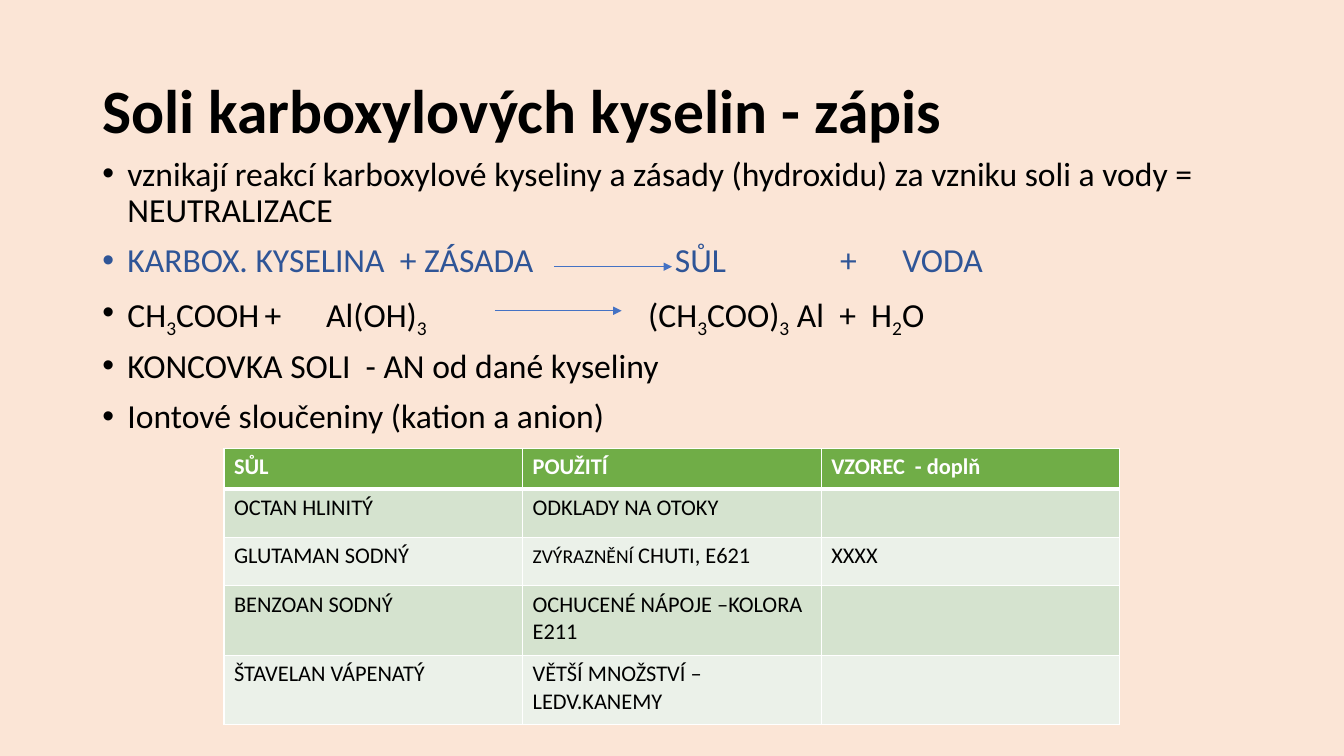
import dataclasses

import lxml.etree
import pptx
import pptx.dml.color
import pptx.enum.shapes
import pptx.enum.text
import pptx.oxml.ns
import pptx.util

Pt = pptx.util.Pt
qn = pptx.oxml.ns.qn
BLACK, WHITE, BLUE = "000000", "FFFFFF", "2F5597"


@dataclasses.dataclass(frozen=True)
class Run:
    text: str
    size: float = 24
    color: str = BLACK
    bold: bool = False
    base: int = 0


@dataclasses.dataclass(frozen=True)
class Item:
    runs: list[Run]
    tabs: tuple[float, ...] = ()


@dataclasses.dataclass(frozen=True)
class Arrow:
    left: float
    right: float
    top: float


def sub(text: str) -> Run:
    return Run(text, base=-25000)


ITEMS = [
    Item([Run("vznikají reakcí karboxylové kyseliny a zásady (hydroxidu) "
              "za vzniku soli a vody = NEUTRALIZACE")]),
    Item([Run("KARBOX. KYSELINA  + ZÁSADA\tSŮL\t+\tVODA", color=BLUE)],
         (409, 527, 571.5)),
    Item([Run("CH"), sub("3"), Run("COOH\t+\tAl(OH)"), sub("3"),
          Run("\t(CH"), sub("3"), Run("COO)"), sub("3"),
          Run(" Al  +  H"), sub("2"), Run("O")],
         (116, 160, 390)),
    Item([Run("KONCOVKA SOLI  - AN od dané kyseliny")]),
    Item([Run("Iontové sloučeniny (kation a anion)")]),
]
ARROWS = [Arrow(396, 480, 190.5), Arrow(353.5, 444, 222)]
HEADS = ["SŮL", "POUŽITÍ", "VZOREC  - doplň"]
SALTS = [
    ["OCTAN HLINITÝ", "ODKLADY NA OTOKY", ""],
    ["GLUTAMAN SODNÝ", "CHUTI, E621", "XXXX"],
    ["BENZOAN SODNÝ", "OCHUCENÉ NÁPOJE –KOLORA E211", ""],
    ["ŠTAVELAN VÁPENATÝ", "VĚTŠÍ MNOŽSTVÍ – LEDV.KANEMY", ""],
]
LEADS = {"CHUTI, E621": Run("ZVÝRAZNĚNÍ ", 14)}
ROWS = [28.8, 34.6, 34.6, 49.7, 49.7]
BANDS = ["D5E3CF", "EBF1E9"]


def rgb(code: str) -> pptx.dml.color.RGBColor:
    return pptx.dml.color.RGBColor.from_string(code)


def tint(fill, code: str) -> None:
    fill.solid()
    fill.fore_color.rgb = rgb(code)


def write(para, runs: list[Run]) -> None:
    for part in runs:
        run = para.add_run()
        run.text = part.text
        font = run.font
        font.name, font.size, font.bold = "Calibri", Pt(part.size), part.bold
        font.color.rgb = rgb(part.color)
        if part.base:
            run._r.get_or_add_rPr().set("baseline", str(part.base))


def frame(slide, left: float, top: float, width: float, height: float):
    """Add a wrapping text box and return its text frame."""
    box = slide.shapes.add_textbox(Pt(left), Pt(top), Pt(width), Pt(height))
    box.text_frame.word_wrap = True
    return box.text_frame


def bullet(para, item: Item) -> None:
    para.line_spacing = 0.9
    para.space_before = Pt(10)
    props = para._p.get_or_add_pPr()
    props.set("marL", str(Pt(18)))
    props.set("indent", str(Pt(-18)))
    lxml.etree.SubElement(props, qn("a:buFont")).set("typeface", "Arial")
    lxml.etree.SubElement(props, qn("a:buChar")).set("char", "•")
    if item.tabs:
        stops = lxml.etree.SubElement(props, qn("a:tabLst"))
        for spot in item.tabs:
            stop = lxml.etree.SubElement(stops, qn("a:tab"))
            stop.set("pos", str(Pt(spot)))
            stop.set("algn", "l")
    write(para, item.runs)


def draw(slide, arrow: Arrow) -> None:
    line = slide.shapes.add_connector(
        pptx.enum.shapes.MSO_CONNECTOR.STRAIGHT,
        Pt(arrow.left), Pt(arrow.top), Pt(arrow.right), Pt(arrow.top))
    line.line.width = Pt(0.5)
    tint(line.line.fill, "4472C4")
    tail = lxml.etree.SubElement(line.line._get_or_add_ln(), qn("a:tailEnd"))
    tail.set("type", "triangle")
    lxml.etree.SubElement(line._element.spPr, qn("a:effectLst"))


def edge(cell, low: float) -> None:
    """Give a cell white borders, with the bottom one low points wide."""
    props = cell._tc.get_or_add_tcPr()
    sides = {"lnL": 1, "lnR": 1, "lnT": 1, "lnB": low}
    for spot, (side, width) in enumerate(sides.items()):
        line = lxml.etree.Element(qn(f"a:{side}"))
        line.set("w", str(Pt(width)))
        solid = lxml.etree.SubElement(line, qn("a:solidFill"))
        lxml.etree.SubElement(solid, qn("a:srgbClr")).set("val", WHITE)
        props.insert(spot, line)


def grid(slide) -> None:
    table = slide.shapes.add_table(
        len(ROWS), len(HEADS), Pt(160), Pt(320.4),
        Pt(640), Pt(sum(ROWS))).table
    for col in table.columns:
        col.width = Pt(640 / len(HEADS))
    for y, words in enumerate([HEADS, *SALTS]):
        table.rows[y].height = Pt(ROWS[y])
        head = y == 0
        for x, text in enumerate(words):
            cell = table.cell(y, x)
            tint(cell.fill, "70AD47" if head else BANDS[(y - 1) % 2])
            edge(cell, 3 if head else 1)
            if text:
                runs = [LEADS[text]] if text in LEADS else []
                runs.append(Run(text, 16, WHITE if head else BLACK, head))
                write(cell.text_frame.paragraphs[0], runs)


def main() -> None:
    deck = pptx.Presentation()
    deck.slide_width, deck.slide_height = Pt(960), Pt(540)
    slide = deck.slides.add_slide(deck.slide_layouts[6])
    tint(slide.background.fill, "FBE5D6")

    title = frame(slide, 66, 28.8, 828, 104.4)
    title.vertical_anchor = pptx.enum.text.MSO_ANCHOR.MIDDLE
    title.paragraphs[0].line_spacing = 0.9
    write(title.paragraphs[0],
          [Run("Soli karboxylových kyselin - zápis", 44, bold=True)])

    body = frame(slide, 66, 108.7, 828, 431.3)
    for spot, item in enumerate(ITEMS):
        bullet(body.add_paragraph() if spot else body.paragraphs[0], item)

    grid(slide)
    for arrow in ARROWS:
        draw(slide, arrow)
    deck.save("out.pptx")


if __name__ == "__main__":
    main()
